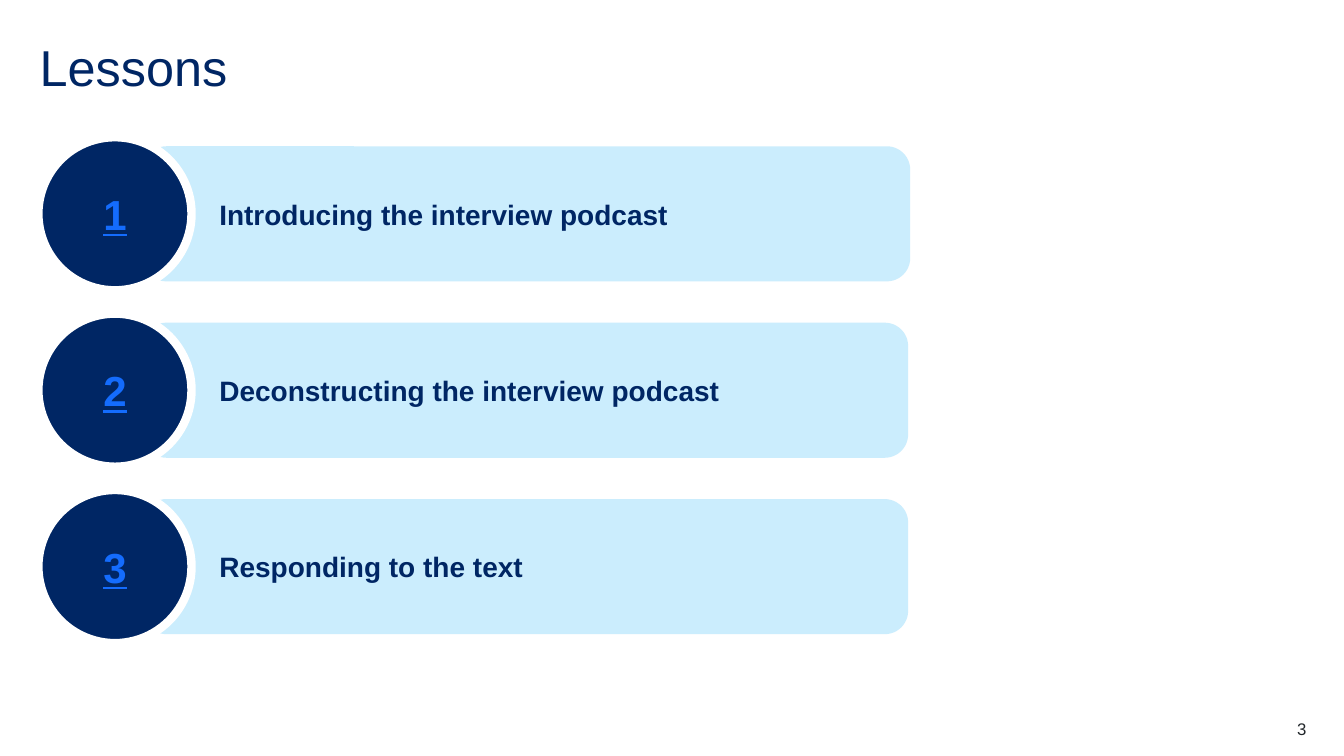
"""Build the lessons overview slide with three numbered bars."""
from dataclasses import dataclass

from pptx import Presentation
from pptx.dml.color import RGBColor
from pptx.enum.shapes import MSO_SHAPE
from pptx.enum.text import MSO_ANCHOR, PP_ALIGN
from pptx.util import Pt

ROUNDED = MSO_SHAPE.ROUNDED_RECTANGLE
OVAL = MSO_SHAPE.OVAL
MIDDLE = MSO_ANCHOR.MIDDLE
LEFT, CENTER, RIGHT = PP_ALIGN.LEFT, PP_ALIGN.CENTER, PP_ALIGN.RIGHT
TITLE_ONLY = 5

LESSONS = [
    ("Introducing the interview podcast", 548),
    ("Deconstructing the interview podcast", 546.5),
    ("Responding to the text", 546.5),
]
FIRST_TOP = 98
PITCH = 126


@dataclass(frozen=True)
class Theme:
    font: str = "Arial"
    navy: str = "002664"
    sky: str = "CBEDFD"
    link: str = "146CFD"
    ring: str = "FFFFFF"
    ink: str = "22272B"
    title_size: int = 36
    number_size: int = 30
    lesson_size: int = 20
    page_size: int = 12


class LessonSlide:
    def __init__(self, slide, theme):
        self.slide = slide
        self.theme = theme

    def add_text(self, frame, text, size, color, align=LEFT, bold=False, underline=False):
        frame.word_wrap = True
        frame.vertical_anchor = MIDDLE
        paragraph = frame.paragraphs[0]
        paragraph.alignment = align
        run = paragraph.add_run()
        run.text = text
        run.font.name = self.theme.font
        run.font.size = Pt(size)
        run.font.bold = bold
        run.font.underline = underline
        run.font.color.rgb = RGBColor.from_string(color)
        return paragraph

    def clear_margins(self, frame):
        frame.margin_left = frame.margin_right = 0
        frame.margin_top = frame.margin_bottom = 0

    def title(self, text, left, top, width, height):
        heading = self.slide.shapes.title
        heading.left, heading.top = Pt(left), Pt(top)
        heading.width, heading.height = Pt(width), Pt(height)
        self.clear_margins(heading.text_frame)
        paragraph = self.add_text(heading.text_frame, text,
                                  self.theme.title_size, self.theme.navy)
        paragraph.line_spacing = 0.9

    def filled(self, group, kind, left, top, width, height, color):
        shape = group.shapes.add_shape(kind, Pt(left), Pt(top), Pt(width), Pt(height))
        shape.shadow.inherit = False
        shape.fill.solid()
        shape.fill.fore_color.rgb = RGBColor.from_string(color)
        shape.line.fill.background()
        return shape

    def bar(self, group, text, top, width):
        bar = self.filled(group, ROUNDED, 102.2, top, width, 96.5, self.theme.sky)
        bar.adjustments[0] = 0.173
        paragraph = self.add_text(bar.text_frame, text, self.theme.lesson_size,
                                  self.theme.navy, bold=True)
        paragraph._p.get_or_add_pPr().set("marL", str(Pt(42.5)))

    def badge(self, group, number, top):
        badge = self.filled(group, OVAL, 27.4, top, 109.4, 109.4, self.theme.navy)
        badge.line.color.rgb = RGBColor.from_string(self.theme.ring)
        badge.line.width = Pt(6)
        self.add_text(badge.text_frame, str(number), self.theme.number_size,
                      self.theme.link, CENTER, bold=True, underline=True)

    def lesson(self, number, text, top, width):
        group = self.slide.shapes.add_group_shape()
        self.bar(group, text, top + 6.5, width)
        self.badge(group, number, top)

    def page_number(self, text, left, top, width, height):
        footer = self.slide.shapes.add_textbox(Pt(left), Pt(top), Pt(width), Pt(height))
        self.clear_margins(footer.text_frame)
        self.add_text(footer.text_frame, text, self.theme.page_size, self.theme.ink, RIGHT)


def main():
    deck = Presentation()
    deck.slide_width, deck.slide_height = Pt(960), Pt(540)
    page = LessonSlide(deck.slides.add_slide(deck.slide_layouts[TITLE_ONLY]), Theme())
    page.title("Lessons", 28.3, 28.3, 904, 43.2)
    for index, (text, width) in enumerate(LESSONS):
        page.lesson(index + 1, text, FIRST_TOP + index * PITCH, width)
    page.page_number("3", 876.2, 513.4, 56.9, 14.4)
    deck.save("out.pptx")


if __name__ == "__main__":
    main()
